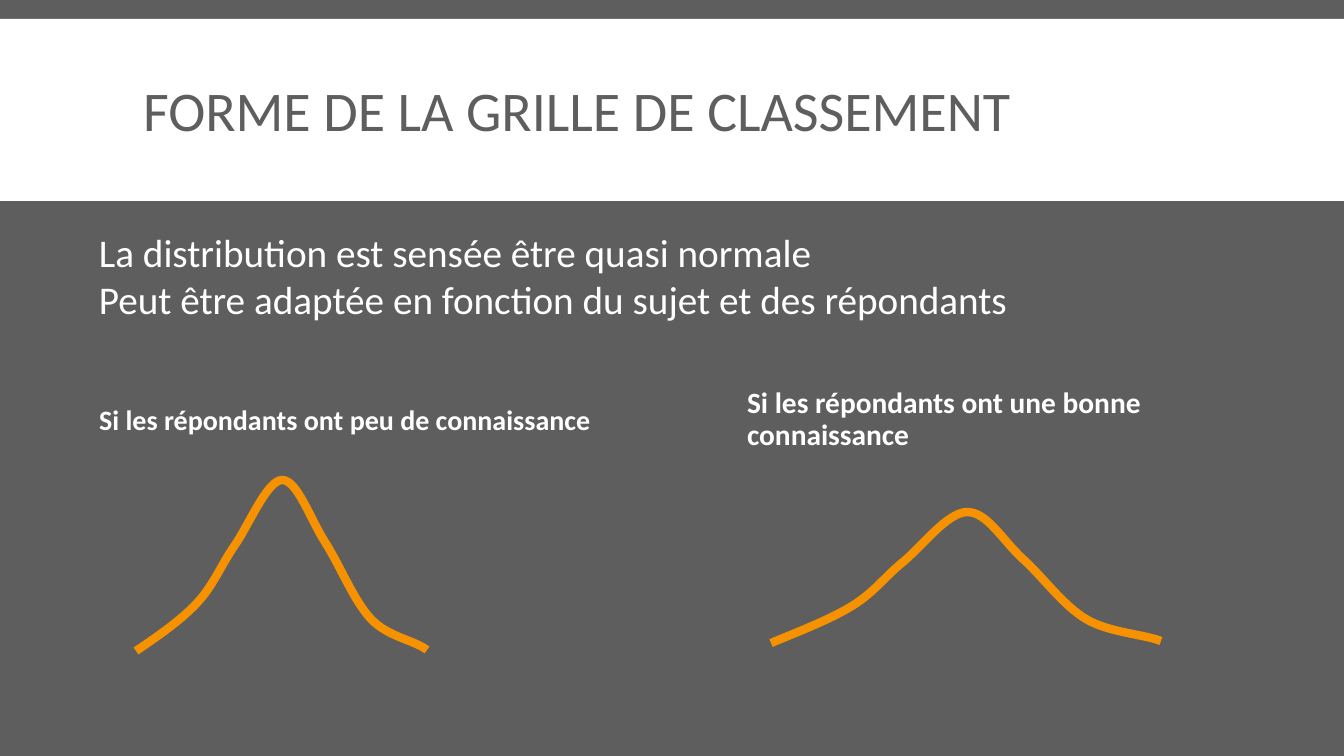
from dataclasses import dataclass

from lxml import etree
from pptx import Presentation
from pptx.dml.color import RGBColor
from pptx.enum.shapes import MSO_SHAPE
from pptx.enum.text import MSO_ANCHOR, MSO_AUTO_SIZE, PP_ALIGN
from pptx.oxml.ns import qn
from pptx.util import Pt

PX = 914400 / 100.8
COMPARISON_LAYOUT = 4
RECTANGLE = MSO_SHAPE.RECTANGLE
LEFT = PP_ALIGN.LEFT
TOP, MIDDLE = MSO_ANCHOR.TOP, MSO_ANCHOR.MIDDLE
NO_FIT, GROW = MSO_AUTO_SIZE.NONE, MSO_AUTO_SIZE.SHAPE_TO_FIT_TEXT


@dataclass(frozen=True)
class Theme:
    font: str = "Calibri"
    grey: RGBColor = RGBColor(0x5E, 0x5E, 0x5E)
    white: RGBColor = RGBColor(0xFF, 0xFF, 0xFF)
    orange: RGBColor = RGBColor(0xF6, 0x92, 0x00)
    title_size: int = 40
    intro_size: int = 28
    few_size: int = 20
    good_size: int = 21
    curve_width: int = 6


THEME = Theme()
HEADING_SPACING = {"line_spacing": 0.9, "space_before": Pt(12), "space_after": Pt(2)}


def px(length):
    return round(length * PX)


def set_all(target, values):
    for name, value in values.items():
        setattr(target, name, value)


def place(shape, left, top, width, height):
    set_all(shape, {"left": px(left), "top": px(top),
                    "width": px(width), "height": px(height)})


def write(box, lines, size, color, bold=False, anchor=MIDDLE, fit=NO_FIT, spacing=None):
    frame = box.text_frame
    set_all(frame, {"word_wrap": True, "auto_size": fit, "vertical_anchor": anchor})
    frame.text = "\n".join(lines)
    for para in frame.paragraphs:
        set_all(para, {"alignment": LEFT, **(spacing or {})})
        for span in para.runs:
            set_all(span.font, {"name": THEME.font, "size": Pt(size), "bold": bold})
            span.font.color.rgb = color


def add_title_band(page):
    band = page.shapes.add_shape(RECTANGLE, 0, px(19), px(1344), px(182))
    band.shadow.inherit = False
    band.fill.solid()
    band.fill.fore_color.rgb = THEME.white
    band.line.fill.background()
    page.shapes._spTree.insert(2, band._element)


def add_curve(page, anchors, start_handle, end_handle):
    """Draw a smooth open curve; inner handles are a sixth of the neighbours' distance."""
    points = [(px(x), px(y)) for x, y in anchors]
    builder = page.shapes.build_freeform(*points[0], scale=1.0)
    builder.add_line_segments(points[1:], close=False)
    curve = builder.convert_to_shape()
    curve.shadow.inherit = False
    curve.fill.background()
    curve.line.color.rgb = THEME.orange
    curve.line.width = Pt(THEME.curve_width)

    left, top = curve.left, curve.top
    local = [(x - left, y - top) for x, y in points]
    inner = [((after[0] - before[0]) / 6, (after[1] - before[1]) / 6)
             for before, after in zip(local, local[2:])]
    first = tuple(px(v) for v in start_handle)
    last = tuple(-px(v) for v in end_handle)
    handles = [first, *inner, last]
    segments = list(curve._element.iter(qn("a:lnTo")))
    for index, segment in enumerate(segments):
        (x0, y0), (x1, y1) = local[index:index + 2]
        (dx0, dy0), (dx1, dy1) = handles[index:index + 2]
        segment.tag = qn("a:cubicBezTo")
        for position, (x, y) in enumerate([(x0 + dx0, y0 + dy0), (x1 - dx1, y1 - dy1)]):
            control = etree.Element(qn("a:pt"), x=str(round(x)), y=str(round(y)))
            segment.insert(position, control)


def main():
    deck = Presentation()
    set_all(deck, {"slide_width": px(1344), "slide_height": px(756)})
    page = deck.slides.add_slide(deck.slide_layouts[COMPARISON_LAYOUT])
    page.background.fill.solid()
    page.background.fill.fore_color.rgb = THEME.grey
    title, few, few_content, good, good_content = page.placeholders
    for unused in (few_content, good_content):
        unused._element.getparent().remove(unused._element)

    add_title_band(page)
    place(title, 133, 31, 1079, 166)
    write(title, ["FORME DE LA GRILLE DE CLASSEMENT"], THEME.title_size, THEME.grey,
          spacing={"line_spacing": 0.85})

    place(few, 89, 380, 524, 82)
    write(few, ["Si les répondants ont peu de connaissance"], THEME.few_size,
          THEME.white, bold=True, spacing=HEADING_SPACING)
    place(good, 737, 379, 524, 82)
    write(good, ["Si les répondants ont une bonne connaissance"], THEME.good_size,
          THEME.white, bold=True, spacing=HEADING_SPACING)

    intro = page.shapes.add_textbox(px(89), px(223), px(1218), px(105))
    write(intro, ["La distribution est sensée être quasi normale",
                  "Peut être adaptée en fonction du sujet et des répondants"],
          THEME.intro_size, THEME.white, anchor=TOP, fit=GROW)

    add_curve(page, [(136, 651), (197, 603), (235, 545), (282, 480),
                     (325, 542), (371, 619), (427, 650)], (22, -15), (-13, -10))
    add_curve(page, [(771, 643), (852, 606), (903, 562), (967, 512),
                     (1023, 559), (1086, 619), (1161, 641)], (29, -12), (-18, -7))
    deck.save("out.pptx")


if __name__ == "__main__":
    main()
